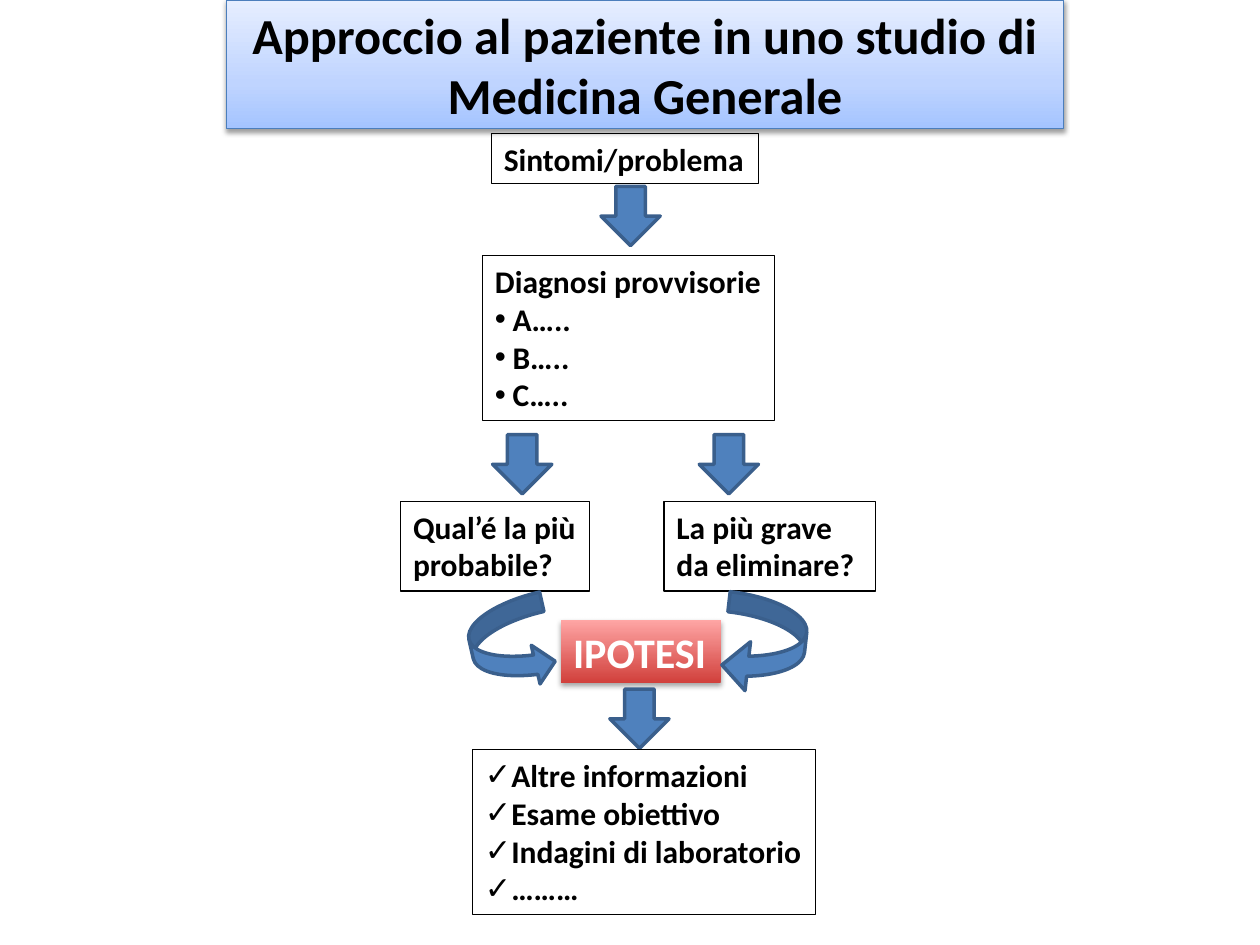
from dataclasses import dataclass

from lxml.etree import SubElement
from pptx import Presentation
from pptx.dml.color import RGBColor
from pptx.enum.shapes import MSO_SHAPE
from pptx.enum.text import MSO_ANCHOR, MSO_AUTO_SIZE, PP_ALIGN
from pptx.oxml.ns import qn
from pptx.util import Inches, Pt

COLORS = {
    "text": "000000", "white": "FFFFFF", "border": "000000",
    "arrow": "4F81BD", "arrow_edge": "3A5F8C", "title_edge": "4B7EBC",
}
TITLE_STOPS = [(0, "A4C4FF"), (35, "BFD4FF"), (100, "E6EEFF")]
RED_STOPS = [(0, "D1403C"), (100, "FFA6A5")]
COLUMNS, ROWS = 100, 75
CELL = Inches(0.1)
ARROW = 4.7  # side of a down arrow, in cells


@dataclass
class Box:
    """An area of the slide, measured in grid cells."""
    left: float
    top: float
    width: float
    height: float

    def inside(self, left, top, width, height):
        return Box(self.left + left, self.top + top, width, height)

    def lengths(self):
        return [round(n * CELL) for n in (self.left, self.top, self.width, self.height)]


def rgb(name):
    return RGBColor.from_string(COLORS[name])


def add_shape(page, box, kind=MSO_SHAPE.RECTANGLE, fill=None, line=None, weight=0.75):
    shape = page.shapes.add_shape(kind, *box.lengths())
    shape.shadow.inherit = False
    if fill:
        shape.fill.solid()
        shape.fill.fore_color.rgb = rgb(fill)
    else:
        shape.fill.background()
    if line:
        shape.line.color.rgb = rgb(line)
        shape.line.width = Pt(weight)
    else:
        shape.line.fill.background()
    return shape


def add_gradient(shape, stops):
    """Vertical gradient whose first stop lies at the bottom."""
    shape.fill.gradient()
    shape.fill.gradient_angle = 90
    stop_list = shape.element.spPr.find(qn("a:gradFill")).find(qn("a:gsLst"))
    for stop in list(stop_list):
        stop_list.remove(stop)
    for place, color in stops:
        stop = SubElement(stop_list, qn("a:gs"), pos=str(place * 1000))
        SubElement(stop, qn("a:srgbClr"), val=color)


def add_shadow(shape, distance, opacity):
    effects = shape.element.spPr.find(qn("a:effectLst"))
    shadow = SubElement(effects, qn("a:outerShdw"), blurRad=str(Pt(3.1)),
                        dist=str(Pt(distance)), dir="5400000", rotWithShape="0")
    color = SubElement(shadow, qn("a:srgbClr"), val="000000")
    SubElement(color, qn("a:alpha"), val=str(opacity * 1000))


def add_bullet(para, mark, indent):
    props = para._p.get_or_add_pPr()
    props.set("marL", str(Inches(indent)))
    props.set("indent", str(-Inches(indent)))
    SubElement(props, qn("a:buFont"), typeface="Arial")
    SubElement(props, qn("a:buChar"), char=mark)


def write(shape, lines, size=18, color="text", align=PP_ALIGN.LEFT, bullet=None, first=0):
    """Fill a shape with lines; those from number `first` on take the bullet."""
    frame = shape.text_frame
    for number, line in enumerate(lines):
        para = frame.paragraphs[0] if number == 0 else frame.add_paragraph()
        para.alignment = align
        if bullet and number >= first:
            add_bullet(para, *bullet)
        span = para.add_run()
        span.text = line
        span.font.color.rgb = rgb(color)
        for name, value in {"name": "Calibri", "size": Pt(size), "bold": True}.items():
            setattr(span.font, name, value)


def fit_to_text(shape):
    layout = {"word_wrap": False, "auto_size": MSO_AUTO_SIZE.SHAPE_TO_FIT_TEXT,
              "vertical_anchor": MSO_ANCHOR.TOP}
    for name, value in layout.items():
        setattr(shape.text_frame, name, value)


def add_text_box(page, box, lines, **style):
    shape = add_shape(page, box, line="border")
    fit_to_text(shape)
    write(shape, lines, **style)


def add_arrow(page, box, kind=MSO_SHAPE.DOWN_ARROW):
    return add_shape(page, box, kind, "arrow", "arrow_edge", 2)


def title(page, box):
    shape = add_shape(page, box, line="title_edge")
    add_gradient(shape, TITLE_STOPS)
    add_shadow(shape, 1.6, 38)
    shape.text_frame.word_wrap = True
    shape.text_frame.vertical_anchor = MSO_ANCHOR.MIDDLE
    write(shape, ["Approccio al paziente in uno studio di Medicina Generale"],
          size=28.8, align=PP_ALIGN.CENTER)


def symptoms_and_diagnoses(page, box):
    add_text_box(page, box.inside(0.7, 0, 21.2, 4), ["Sintomi/problema"])
    add_arrow(page, box.inside(9.4, 4.2, ARROW, ARROW))
    add_text_box(page, box.inside(0, 9.7, box.width, 13.1),
                 ["Diagnosi provvisorie", "A…..", "B…..", "C….."],
                 bullet=("•", 0.14), first=1)


def questions(page, box):
    for left in (7.3, 23.7):
        add_arrow(page, box.inside(left, 0, ARROW, ARROW))
    add_text_box(page, box.inside(0, 5.3, 15, 7.1), ["Qual’é la più", "probabile?"])
    add_text_box(page, box.inside(20.9, 5.3, 16.8, 7.1), ["La più grave", "da eliminare?"])


def hypothesis(page, box):
    shape = add_shape(page, box.inside(7.1, 1.9, 12.7, 5))
    add_gradient(shape, RED_STOPS)
    add_shadow(shape, 1.8, 35)
    fit_to_text(shape)
    write(shape, ["IPOTESI"], size=24, color="white")
    # Curved arrows from both questions
    from_left = add_arrow(page, box.inside(0, 0.3, 6.3, 7.2), MSO_SHAPE.CURVED_RIGHT_ARROW)
    from_left.rotation = 347.2
    from_right = add_arrow(page, box.inside(20.1, 0, 6.4, 7.8), MSO_SHAPE.CURVED_RIGHT_ARROW)
    from_right.rotation = 6.5
    from_right.element.spPr.xfrm.set("flipH", "1")
    for number, value in enumerate((0.25, 0.62, 0.32)):
        from_right.adjustments[number] = value
    # Arrow to the checks
    add_arrow(page, box.inside(11, 7.4, ARROW, ARROW))


def checks(page, box):
    add_text_box(page, box,
                 ["Altre informazioni", "Esame obiettivo", "Indagini di laboratorio", "………"],
                 bullet=("✓", 0.2))


def main():
    deck = Presentation()
    deck.slide_width, deck.slide_height = COLUMNS * CELL, ROWS * CELL
    page = deck.slides.add_slide(deck.slide_layouts[6])
    title(page, Box(18, 0, 66.4, 10.2))
    symptoms_and_diagnoses(page, Box(38.3, 10.6, 23.2, 22.8))
    questions(page, Box(31.8, 34.5, 37.7, 12.4))
    hypothesis(page, Box(37.4, 47.3, 26.5, 12.1))
    checks(page, Box(37.5, 59.5, 27.2, 13.1))
    deck.save("out.pptx")


if __name__ == "__main__":
    main()
